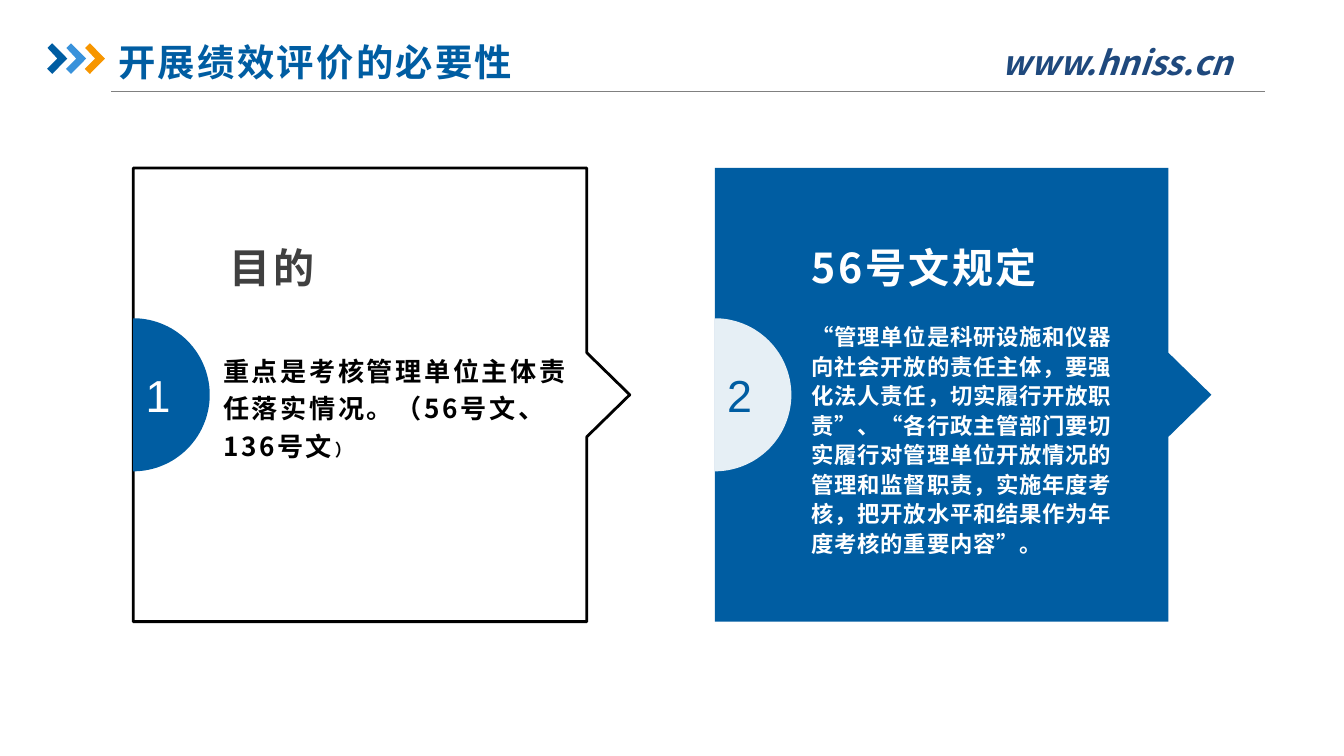
import math
from dataclasses import dataclass

from lxml import etree
from pptx import Presentation
from pptx.dml.color import RGBColor
from pptx.enum import text as t
from pptx.oxml.ns import qn
from pptx.util import Pt


@dataclass(frozen=True)
class Theme:
    blue: str = "005DA2"
    sky: str = "3992DB"
    orange: str = "F79600"
    navy: str = "1F497D"
    dark: str = "404040"
    rule: str = "808080"
    black: str = "000000"
    white: str = "FFFFFF"
    cjk: str = "Noto Sans CJK SC"
    latin: str = "Arial"
    heading: int = 22
    title: int = 20
    site: int = 18
    number: int = 24
    aside: int = 9


THEME = Theme()


def format_run(run, size, color, font=THEME.cjk, bold=True, italic=False, spacing=0):
    run.font.size = Pt(size)
    run.font.bold = bold
    run.font.italic = italic
    run.font.color.rgb = RGBColor.from_string(color)
    run.font.name = font
    properties = run.font._element
    properties.set("spc", str(round(spacing * 100)))
    etree.SubElement(properties, qn("a:ea")).set("typeface", font)


def add_label(slide, box, content, size, color, anchor=t.MSO_ANCHOR.MIDDLE, **style):
    frame = slide.shapes.add_textbox(*map(Pt, box)).text_frame
    frame.word_wrap = True
    frame.vertical_anchor = anchor
    paragraph = frame.paragraphs[0]
    paragraph.text = content
    format_run(paragraph.runs[0], size, color, **style)
    return paragraph


def add_outline(slide, points, fill=None, line=None, opacity=100):
    """Draw a closed polygon through points given in points."""
    corners = [(Pt(x), Pt(y)) for x, y in points]
    builder = slide.shapes.build_freeform(*corners[0])
    builder.add_line_segments(corners[1:], close=True)
    outline = builder.convert_to_shape()
    outline.shadow.inherit = False
    if fill:
        outline.fill.solid()
        outline.fill.fore_color.rgb = RGBColor.from_string(fill)
        if opacity < 100:
            color = outline.fill._xPr.find(".//" + qn("a:srgbClr"))
            etree.SubElement(color, qn("a:alpha")).set("val", str(opacity * 1000))
    else:
        outline.fill.background()
    if line:
        outline.line.color.rgb = RGBColor.from_string(line)
        outline.line.width = Pt(1.5)
    else:
        outline.line.fill.background()


def add_header(slide, left, top, width, title, site):
    rule_y = top + 34
    rule = slide.shapes.add_connector(1, Pt(left + 34.5), Pt(rule_y),
                                      Pt(left + width), Pt(rule_y))
    rule.line.color.rgb = RGBColor.from_string(THEME.rule)
    rule.line.width = Pt(0.75)
    etree.SubElement(rule._element.spPr, qn("a:effectLst"))

    chevron = [(0.2, 2.5), (2.7, 0), (10.8, 8.2), (2.7, 16.4), (0, 13.7), (5.5, 8.2)]
    for index, color in enumerate((THEME.blue, THEME.sky, THEME.orange)):
        x0, y0 = left + 10.1 * index, top + 8
        add_outline(slide, [(x0 + x, y0 + y) for x, y in chevron], fill=color)

    address = add_label(slide, (left + 488, top + 3.5, 170, 29), site, THEME.site,
                        THEME.navy, anchor=t.MSO_ANCHOR.TOP, italic=True)
    address.alignment = t.PP_ALIGN.CENTER

    heading = slide.shapes.title
    heading.left, heading.top = Pt(left + 34.5), Pt(top)
    heading.width, heading.height = Pt(648), Pt(36)
    frame = heading.text_frame
    frame.text = title
    frame.auto_size = t.MSO_AUTO_SIZE.NONE
    frame.word_wrap = True
    frame.vertical_anchor = t.MSO_ANCHOR.MIDDLE
    frame.margin_left = frame.margin_right = Pt(3.6)
    frame.margin_top = frame.margin_bottom = Pt(1.44)
    frame.paragraphs[0].alignment = t.PP_ALIGN.LEFT
    format_run(frame.paragraphs[0].runs[0], THEME.title, THEME.blue, spacing=1.2)


def add_panel(slide, left, top, side, panel):
    """Draw a square panel with an arrow tip, a numbered half disc and its text."""
    right, bottom, middle = left + side, top + side, top + side / 2
    tip_depth, tip_half, radius = 23, 22.5, 41
    add_outline(slide, [(right, top), (right, middle - tip_half),
                        (right + tip_depth, middle), (right, middle + tip_half),
                        (right, bottom), (left, bottom), (left, top)],
                fill=panel["fill"], line=panel["line"])
    angles = [math.radians(degree) for degree in range(-90, 91, 3)]
    add_outline(slide, [(left + radius * math.cos(a), middle + radius * math.sin(a))
                        for a in angles],
                fill=panel["disc"], opacity=panel["opacity"])
    add_label(slide, (left - 0.5, top + 93, 36.5, 57), panel["number"], THEME.number,
              panel["number_color"], font=THEME.latin, bold=False, spacing=3)

    dx, dy, width = panel["body_box"]
    body = add_label(slide, (left + dx, top + dy, width, 143), panel["body"],
                     panel["body_size"], panel["body_color"],
                     spacing=panel["body_spacing"])
    body.line_spacing = panel["line_spacing"]
    body.space_after = Pt(8)
    if panel["aside"]:
        aside = body.add_run()
        aside.text = panel["aside"]
        format_run(aside, THEME.aside, panel["body_color"],
                   spacing=panel["body_spacing"])
    add_label(slide, (left + panel["heading_dx"], top + 34, 187, 38),
              panel["heading"], THEME.heading, panel["heading_color"], spacing=1.4)


PANELS = [
    dict(number="1", heading="目的", aside="）",
         body="重点是考核管理单位主体责任落实情况。（56号文、136号文",
         fill=None, line=THEME.black, disc=THEME.blue, opacity=100,
         number_color=THEME.white, heading_color=THEME.dark, heading_dx=44.7,
         body_color=THEME.black, body_size=14, body_spacing=1.4,
         line_spacing=1.2, body_box=(41, 55.5, 204)),
    dict(number="2", heading="56号文规定", aside=None,
         body="“管理单位是科研设施和仪器向社会开放的责任主体，要强化法人责任，"
              "切实履行开放职责”、“各行政主管部门要切实履行对管理单位开放情况的"
              "管理和监督职责，实施年度考核，把开放水平和结果作为年度考核的重要内容”。",
         fill=THEME.blue, line=None, disc=THEME.white, opacity=90,
         number_color=THEME.blue, heading_color=THEME.white, heading_dx=44.7,
         body_color=THEME.white, body_size=12, body_spacing=0.4,
         line_spacing=1.1, body_box=(44.7, 73.5, 187)),
]


def main():
    deck = Presentation()
    deck.slide_width, deck.slide_height = Pt(720), Pt(405)
    slide = deck.slides.add_slide(deck.slide_layouts[5])
    add_header(slide, 25.25, 15.2, 652.5, "开展绩效评价的必要性", "www.hniss.cn")
    for index, panel in enumerate(PANELS):
        add_panel(slide, 71.4 + 311.6 * index, 90, 243, panel)
    deck.save("out.pptx")


if __name__ == "__main__":
    main()
